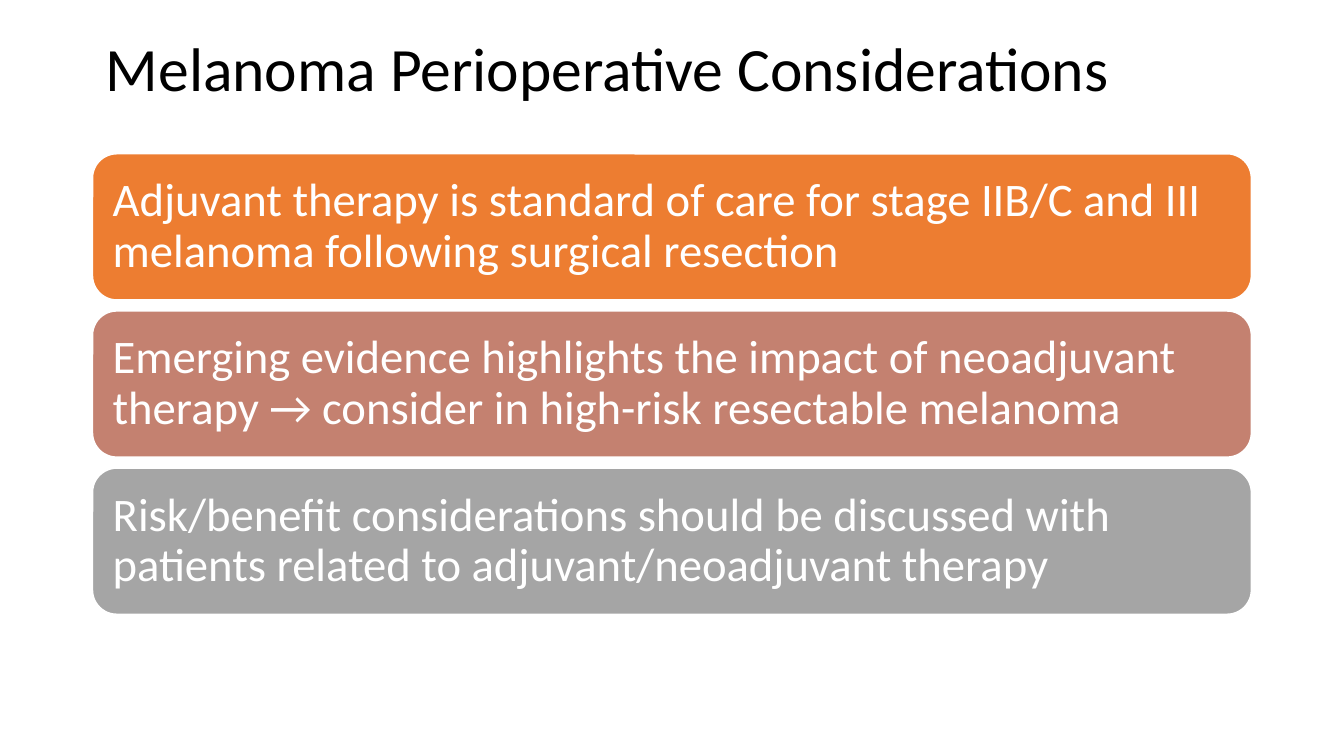
"""Build the melanoma perioperative considerations slide."""
import pptx
import pptx.util
import pptx.dml.color
import pptx.enum.shapes
import pptx.enum.text

Pt = pptx.util.Pt

TITLE = "Melanoma Perioperative Considerations"
CARDS = [
    ("Adjuvant therapy is standard of care for stage IIB/C and III "
     "melanoma following surgical resection", "ED7D31"),
    ("Emerging evidence highlights the impact of neoadjuvant therapy "
     "→ consider in high-risk resectable melanoma", "C48170"),
    ("Risk/benefit considerations should be discussed with patients "
     "related to adjuvant/neoadjuvant therapy", "A5A5A5"),
]
THEME = {"font": "Calibri", "ink": "000000", "paper": "FFFFFF",
         "title": 33, "body": 25}
LEFT, WIDTH = 49.5, 621
TOP, HIGH, GAP = 82.3, 78.5, 5.7
INSET = 7.2


def tint(code):
    return pptx.dml.color.RGBColor.from_string(code)


def write(shape, text, size, color):
    frame = shape.text_frame
    frame.word_wrap = True
    frame.auto_size = pptx.enum.text.MSO_AUTO_SIZE.NONE
    frame.vertical_anchor = pptx.enum.text.MSO_ANCHOR.MIDDLE
    frame.margin_left = frame.margin_right = Pt(INSET)
    frame.margin_top = frame.margin_bottom = Pt(INSET)
    para = frame.paragraphs[0]
    para.alignment = pptx.enum.text.PP_ALIGN.LEFT
    para.line_spacing = 0.9
    run = para.add_run()
    run.text = text
    run.font.name = THEME["font"]
    run.font.size = Pt(size)
    run.font.color.rgb = tint(color)


def card(slide, row, text, fill):
    top = TOP + row * (HIGH + GAP)
    shape = slide.shapes.add_shape(
        pptx.enum.shapes.MSO_SHAPE.ROUNDED_RECTANGLE,
        Pt(LEFT), Pt(top), Pt(WIDTH), Pt(HIGH))
    shape.shadow.inherit = False
    shape.fill.solid()
    shape.fill.fore_color.rgb = tint(fill)
    shape.line.color.rgb = tint(THEME["paper"])
    shape.line.width = Pt(1)
    write(shape, text, THEME["body"], THEME["paper"])


def main():
    deck = pptx.Presentation()
    deck.slide_width, deck.slide_height = Pt(720), Pt(405)
    slide = deck.slides.add_slide(deck.slide_layouts[5])
    title = slide.shapes.title
    title.left, title.top = Pt(LEFT), Pt(-0.7)
    title.width, title.height = Pt(WIDTH), Pt(HIGH)
    write(title, TITLE, THEME["title"], THEME["ink"])
    for row, (text, fill) in enumerate(CARDS):
        card(slide, row, text, fill)
    deck.save("out.pptx")


if __name__ == "__main__":
    main()
